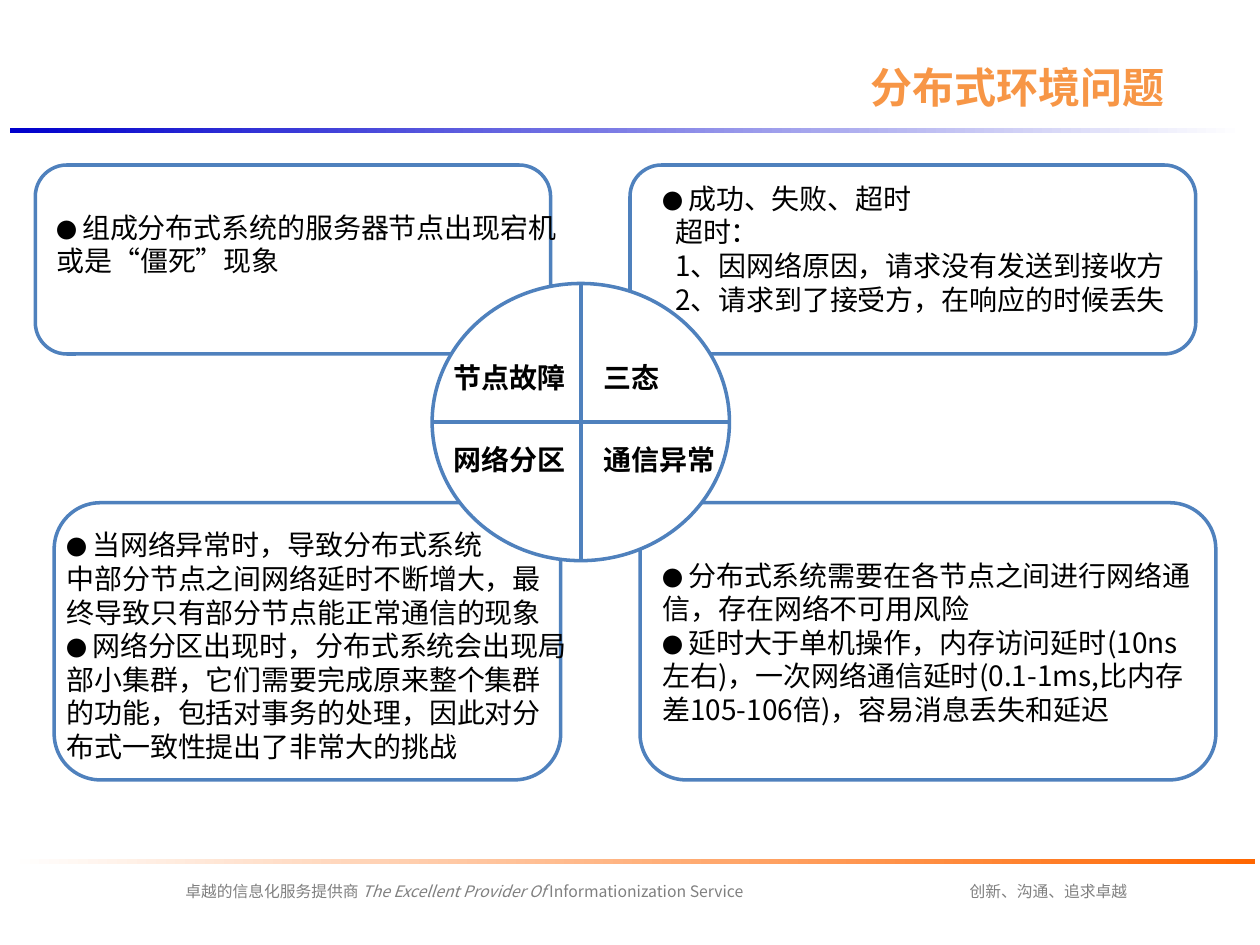
import pptx
import pptx.util
import pptx.dml.color
import pptx.enum.shapes
import pptx.enum.text
import pptx.oxml
import pptx.oxml.ns
from pptx.util import Inches

THEME = {
    "font": "Noto Sans CJK SC",
    "ink": "000000", "muted": "808080", "accent": "F79646",
    "outline": "4F81BD", "paper": "FFFFFF", "orange": "FF6600", "blue": "0000CC",
    "title": 24, "body": 16, "bullet": 12, "footer": 9, "outline_width": 2,
}

# Content: a paragraph is (has bullet, indent in inches, text)
TITLE = "分布式环境问题"
NODE_FAILURE = [(True, 0, "组成分布式系统的服务器节点出现宕机或是“僵死”现象")]
THREE_STATES = [
    (True, 0, "成功、失败、超时"),
    (False, 0.1, "超时："),
    (False, 0.1, "1、因网络原因，请求没有发送到接收方"),
    (False, 0.1, "2、请求到了接受方，在响应的时候丢失"),
]
PARTITION = [
    (True, 0, "当网络异常时，导致分布式系统"),
    (False, 0, "中部分节点之间网络延时不断增大，最终导致只有部分节点能正常通信的现象"),
    (True, 0, "网络分区出现时，分布式系统会出现局部小集群，它们需要完成原来整个集群的功能，"
              "包括对事务的处理，因此对分布式一致性提出了非常大的挑战"),
]
COMMUNICATION = [
    (True, 0, "分布式系统需要在各节点之间进行网络通信，存在网络不可用风险"),
    (True, 0, "延时大于单机操作，内存访问延时(10ns左右)，一次网络通信延时(0.1-1ms,"
              "比内存差105-106倍)，容易消息丢失和延迟"),
]
QUADRANTS = [["节点故障", "三态"], ["网络分区", "通信异常"]]
MOTTO = "创新、沟通、追求卓越"
SLOGAN = [("卓越的信息化服务提供商 ", False), ("The Excellent Provider Of ", True),
          ("Informationization Service", False)]

# Places: left, top, width, height
TITLE_AT = (6.73, 0.29, 2.69, 0.79)
RULES = [((0.08, 6.82, 9.88, 0.04), "paper", "orange"),
         ((0.08, 1.02, 9.8, 0.04), "blue", "paper")]
FOOTERS = [((7.11, 6.95, 2.42, 0.25), [(MOTTO, False)]),
           ((-1.02, 6.95, 9.41, 0.25), SLOGAN)]
CARDS = [(0.28, 1.31, 4.09, 1.5), (5, 1.31, 4.49, 1.5),
         (0.43, 3.99, 4.02, 2.2), (5.08, 3.99, 4.57, 2.2)]
LOWER_NOTES = [((5.16, 4.38, 4.41, 1.45), COMMUNICATION),
               ((0.43, 4.14, 4.17, 1.99), PARTITION)]
UPPER_NOTES = [((0.35, 1.62, 4.17, 0.64), NODE_FAILURE),
               ((5.16, 1.39, 4.41, 1.18), THREE_STATES)]
WHEEL = (3.43, 2.25, 2.36, 2.2)
LABEL_LEFT, LABEL_TOP, LABEL_STEP_X, LABEL_STEP_Y = 3.5, 2.81, 1.19, 0.65
LABEL_SIZE = (1.42, 0.37)

SHAPE = pptx.enum.shapes.MSO_SHAPE


def rgb(name):
    return pptx.dml.color.RGBColor.from_string(THEME[name])


def add_text(paragraph, text, size="body", color="ink", bold=False, italic=False):
    run = paragraph.add_run()
    run.text = text
    font = run.font
    font.name, font.size = THEME["font"], pptx.util.Pt(THEME[size])
    font.bold, font.italic = bold, italic
    font.color.rgb = rgb(color)
    # East Asian typeface follows the Latin one
    east_asian = pptx.oxml.parse_xml(
        f'<a:ea {pptx.oxml.ns.nsdecls("a")} typeface="{THEME["font"]}"/>')
    run.font.element.append(east_asian) if hasattr(run.font, "element") else \
        run._r.get_or_add_rPr().append(east_asian)


def add_frame(slide, at):
    frame = slide.shapes.add_textbox(*map(Inches, at)).text_frame
    frame.word_wrap = True
    frame.auto_size = pptx.enum.text.MSO_AUTO_SIZE.SHAPE_TO_FIT_TEXT
    return frame


def add_outlined(slide, preset, at):
    shape = slide.shapes.add_shape(preset, *map(Inches, at))
    shape.shadow.inherit = False
    shape.fill.solid()
    shape.fill.fore_color.rgb = rgb("paper")
    shape.line.color.rgb = rgb("outline")
    shape.line.width = pptx.util.Pt(THEME["outline_width"])


def add_rule(slide, at, start, end):
    rule = slide.shapes.add_shape(SHAPE.RECTANGLE, *map(Inches, at))
    rule.shadow.inherit = False
    rule.line.fill.background()
    rule.fill.gradient()
    rule.fill.gradient_angle = 0
    for stop, color in zip(rule.fill.gradient_stops, (start, end)):
        stop.color.rgb = rgb(color)


def add_note(slide, at, paragraphs):
    frame = add_frame(slide, at)
    for i, (has_bullet, indent, text) in enumerate(paragraphs):
        paragraph = frame.add_paragraph() if i else frame.paragraphs[0]
        if indent:
            properties = paragraph._p.get_or_add_pPr()
            properties.set("marL", str(Inches(indent)))
            properties.set("indent", "0")
        if has_bullet:
            add_text(paragraph, "● ", size="bullet")
        add_text(paragraph, text)


def main():
    deck = pptx.Presentation()
    deck.slide_width, deck.slide_height = Inches(10), Inches(7.5)
    slide = deck.slides.add_slide(deck.slide_layouts[5])
    centre = pptx.enum.text.PP_ALIGN.CENTER

    # Title
    title = slide.shapes.title
    title.left, title.top, title.width, title.height = map(Inches, TITLE_AT)
    title.text_frame.vertical_anchor = pptx.enum.text.MSO_ANCHOR.MIDDLE
    heading = title.text_frame.paragraphs[0]
    heading.alignment = centre
    add_text(heading, TITLE, size="title", color="accent", bold=True)

    # Header and footer
    for at, start, end in RULES:
        add_rule(slide, at, start, end)
    for at, pieces in FOOTERS:
        footer = add_frame(slide, at).paragraphs[0]
        footer.alignment = centre
        for text, italic in pieces:
            add_text(footer, text, size="footer", color="muted", italic=italic)

    # Cards, with the wheel over the lower notes and under the upper ones
    for at in CARDS:
        add_outlined(slide, SHAPE.ROUNDED_RECTANGLE, at)
    for at, paragraphs in LOWER_NOTES:
        add_note(slide, at, paragraphs)
    add_outlined(slide, SHAPE.FLOWCHART_OR, WHEEL)
    for row, labels in enumerate(QUADRANTS):
        for column, label in enumerate(labels):
            corner = (LABEL_LEFT + column * LABEL_STEP_X, LABEL_TOP + row * LABEL_STEP_Y)
            add_text(add_frame(slide, corner + LABEL_SIZE).paragraphs[0], label, bold=True)
    for at, paragraphs in UPPER_NOTES:
        add_note(slide, at, paragraphs)

    deck.save("out.pptx")


if __name__ == "__main__":
    main()
